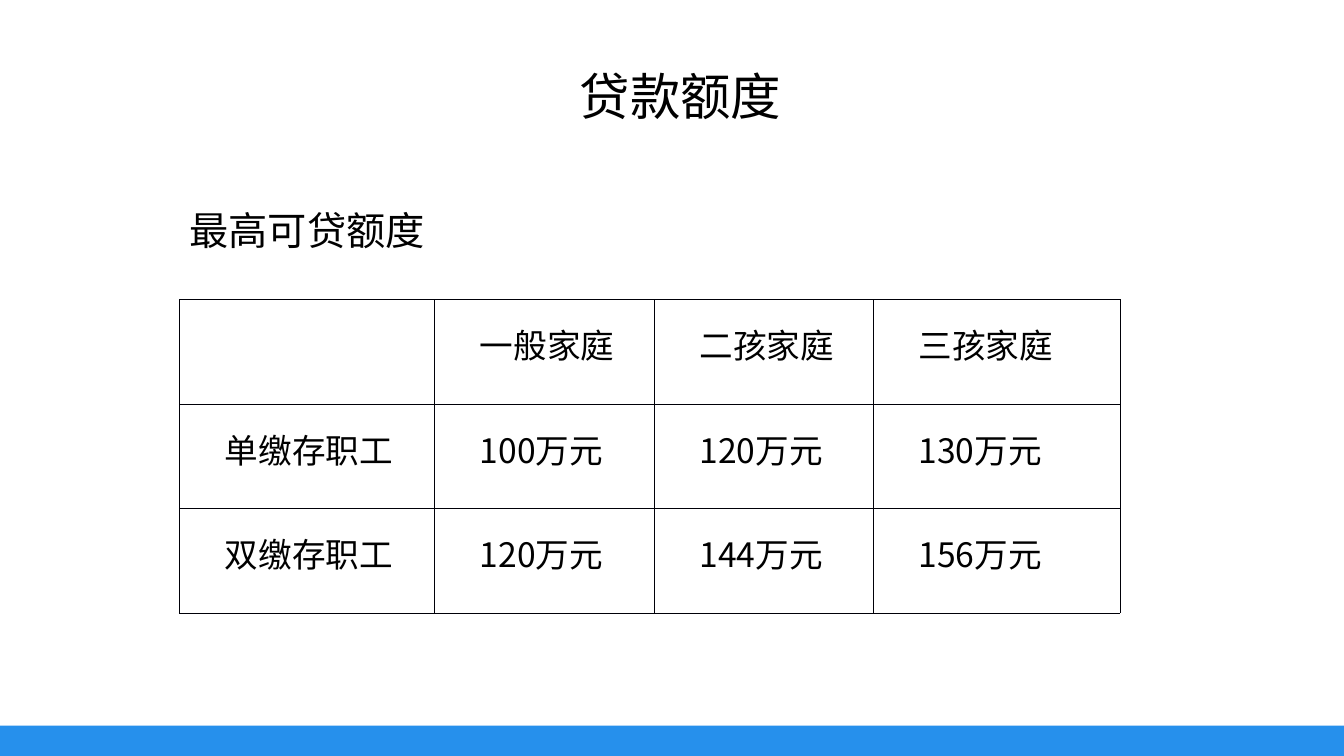
"""Build the slide on maximum housing loan amounts."""
from lxml.etree import SubElement
from pptx import Presentation
from pptx.dml.color import RGBColor
from pptx.enum.shapes import MSO_SHAPE
from pptx.enum.text import MSO_ANCHOR, MSO_AUTO_SIZE, PP_ALIGN
from pptx.oxml import parse_xml
from pptx.oxml.ns import nsdecls, qn
from pptx.util import Inches, Pt

COLORS = {"text": "000000", "border": "000008", "bar": "2690EC"}
CJK_FONT = "Noto Sans CJK SC"


def write_text(frame, text, size, font="Arial", align=PP_ALIGN.LEFT,
               spacing=1.11, anchor=MSO_ANCHOR.TOP):
    frame.word_wrap = True
    frame.vertical_anchor = anchor
    paragraph = frame.paragraphs[0]
    paragraph.alignment = align
    paragraph.line_spacing = spacing
    run = paragraph.add_run()
    run.text = text
    run.font.size = Pt(size)
    run.font.name = font
    run.font.color.rgb = RGBColor.from_string(COLORS["text"])
    SubElement(run.font._element, qn("a:ea"), typeface=CJK_FONT)
    return paragraph


deck = Presentation()
deck.slide_width = Inches(13.33)
deck.slide_height = Inches(7.5)
slide = deck.slides.add_slide(deck.slide_layouts[5])

bottom_bar = slide.shapes.add_shape(
    MSO_SHAPE.RECTANGLE, 0, Inches(7.2), deck.slide_width, Inches(0.3))
bottom_bar.shadow.inherit = False
bottom_bar.fill.solid()
bottom_bar.fill.fore_color.rgb = RGBColor.from_string(COLORS["bar"])
bottom_bar.line.fill.background()

title = slide.shapes.title
title.left, title.top = Inches(5.75), Inches(0.58)
title.width, title.height = Inches(6.92), Inches(0.67)
subtitle = slide.shapes.add_textbox(
    Inches(1.88), Inches(2), Inches(6.75), Inches(0.44))

for heading, text, size in [(title, "贷款额度", 36), (subtitle, "最高可贷额度", 28)]:
    frame = heading.text_frame
    frame.margin_left = frame.margin_right = 0
    frame.margin_top = frame.margin_bottom = 0
    frame.auto_size = MSO_AUTO_SIZE.NONE
    write_text(frame, text, size)

loan_limits = [
    ["", "一般家庭", "二孩家庭", "三孩家庭"],
    ["单缴存职工", "100万元", "120万元", "130万元"],
    ["双缴存职工", "120万元", "144万元", "156万元"],
]
column_widths = [2.53, 2.18, 2.17, 2.45]
limits_table = slide.shapes.add_table(
    len(loan_limits), len(column_widths),
    Inches(1.78), Inches(2.97), Inches(9.33), Inches(3.11)).table
limits_table.first_row = False
limits_table.horz_banding = False
for column, width in zip(limits_table.columns, column_widths):
    column.width = Inches(width)

for row, texts in zip(limits_table.rows, loan_limits):
    for cell, text in zip(row.cells, texts):
        cell.margin_left = cell.margin_right = Inches(0.07)
        cell.margin_top = cell.margin_bottom = 0
        cell_properties = cell._tc.get_or_add_tcPr()
        for side in ("lnL", "lnR", "lnT", "lnB"):
            cell_properties.append(parse_xml(
                f'<a:{side} {nsdecls("a")} w="{Pt(0.5)}"><a:solidFill>'
                f'<a:srgbClr val="{COLORS["border"]}"/></a:solidFill></a:{side}>'))
        cell.fill.background()
        if text:
            cell.vertical_anchor = MSO_ANCHOR.MIDDLE
            paragraph = write_text(
                cell.text_frame, text, 24, font=CJK_FONT, align=PP_ALIGN.JUSTIFY,
                spacing=Pt(24), anchor=MSO_ANCHOR.MIDDLE)
            indents = paragraph._p.get_or_add_pPr()
            indents.set("marL", str(Inches(0.09)))
            indents.set("indent", str(Inches(0.29)))

deck.save("out.pptx")
